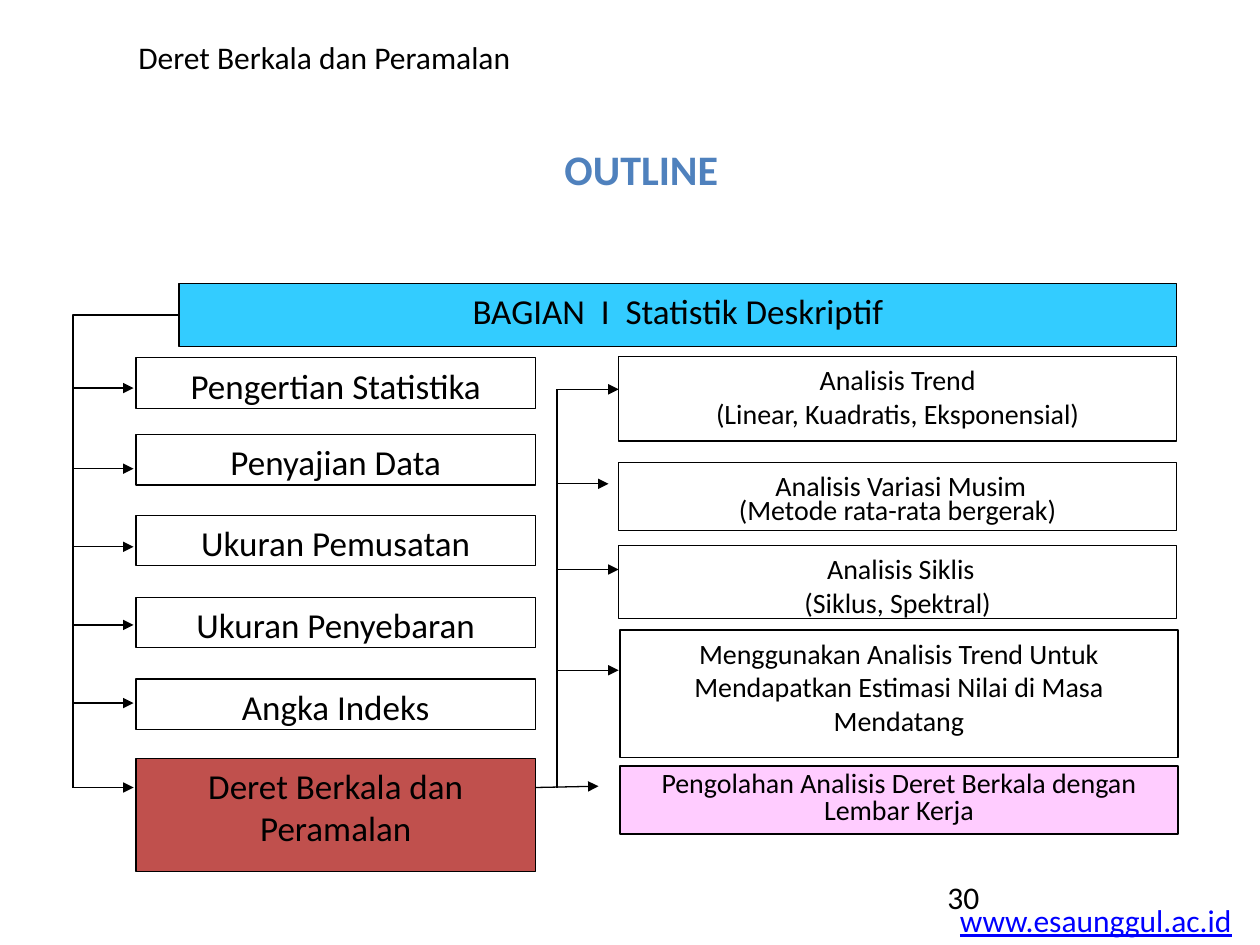
from lxml.etree import SubElement
from pptx import Presentation
from pptx.dml.color import RGBColor
from pptx.enum.shapes import MSO_CONNECTOR, MSO_SHAPE
from pptx.enum.text import MSO_ANCHOR, PP_ALIGN
from pptx.oxml.ns import qn
from pptx.util import Inches, Pt

BLACK = RGBColor(0, 0, 0)
CYAN = RGBColor(0x33, 0xCC, 0xFF)
RED = RGBColor(0xC0, 0x50, 0x4D)
PINK = RGBColor(0xFF, 0xCC, 0xFF)
TITLE_BLUE = RGBColor(0x4F, 0x81, 0xBD)
LINK_BLUE = RGBColor(0, 0, 0xFF)

TOPICS = [
    (2.84, 0.4, ["Pengertian Statistika"], None),
    (3.45, 0.4, ["Penyajian Data"], None),
    (4.09, 0.4, ["Ukuran Pemusatan"], None),
    (4.74, 0.4, ["Ukuran Penyebaran"], None),
    (5.39, 0.4, ["Angka Indeks"], None),
    (6.02, 0.9, ["Deret Berkala dan", "Peramalan"], RED),
]
TOPIC_ARROWS = [3.08, 3.72, 4.34, 4.96, 5.58, 6.25]
DETAILS = [
    (4.91, 2.83, 0.67, ["Analisis Trend", "(Linear, Kuadratis, Eksponensial)"], None, None),
    (4.91, 3.67, 0.54, [" Analisis Variasi Musim", "(Metode rata-rata bergerak)"], None, 0.7),
    (4.91, 4.33, 0.58, [" Analisis Siklis", "(Siklus, Spektral)"], None, None),
    (4.92, 5, 1.01, ["Menggunakan Analisis Trend Untuk Mendapatkan Estimasi Nilai di Masa Mendatang"],
     None, None),
    (4.92, 6.08, 0.54, ["Pengolahan Analisis Deret Berkala dengan Lembar Kerja"], PINK, 0.8),
]
DETAIL_ARROWS = [(3.09, 4.91), (3.84, 4.83), (4.52, 4.91), (5.32, 4.91)]


def write(tf, lines, size, color=BLACK, align=PP_ALIGN.CENTER, last_spacing=None):
    for i, text in enumerate(lines):
        p = tf.paragraphs[0] if i == 0 else tf.add_paragraph()
        p.alignment = align
        r = p.add_run()
        r.text = text
        r.font.name = "Calibri"
        r.font.size = Pt(size)
        r.font.color.rgb = color
    if last_spacing:
        p.line_spacing = last_spacing
    return r


def add_text(s, box, text, size, color=BLACK, align=PP_ALIGN.LEFT, anchor=MSO_ANCHOR.TOP, wrap=True):
    tf = s.shapes.add_textbox(*map(Inches, box)).text_frame
    tf.word_wrap = wrap
    tf.vertical_anchor = anchor
    return write(tf, [text], size, color, align)


def style_outline(sp, fill=None):
    sp.shadow.inherit = False
    sp.line.color.rgb = BLACK
    sp.line.width = Pt(0.75)
    if fill is None:
        sp.fill.background()
    else:
        sp.fill.solid()
        sp.fill.fore_color.rgb = fill


def add_box(s, box, lines, size, fill=None, last_spacing=None):
    sp = s.shapes.add_shape(MSO_SHAPE.RECTANGLE, *map(Inches, box))
    style_outline(sp, fill)
    tf = sp.text_frame
    tf.word_wrap = True
    tf.vertical_anchor = MSO_ANCHOR.TOP
    write(tf, lines, size, last_spacing=last_spacing)


def add_line(s, x1, y1, x2, y2, arrow=True):
    c = s.shapes.add_connector(MSO_CONNECTOR.STRAIGHT, *map(Inches, (x1, y1, x2, y2)))
    c.line.color.rgb = BLACK
    c.line.width = Pt(0.75)
    if arrow:
        SubElement(c.line._get_or_add_ln(), qn("a:tailEnd"), type="triangle")
    SubElement(c._element.spPr, qn("a:effectLst"))


def add_heading(s, left, top, width):
    add_text(s, (left + 0.17, top, 7.92, 0.4), "Deret Berkala dan Peramalan", 18)
    r = add_text(s, (left, top + 0.83, width, 0.51), "OUTLINE", 24, TITLE_BLUE,
                 PP_ALIGN.CENTER, MSO_ANCHOR.MIDDLE)
    r.font.bold = True


def add_topics(s, left, width, rail):
    for top, height, lines, fill in TOPICS:
        add_box(s, (left, top, width, height), lines, 20, fill)
    fb = s.shapes.build_freeform(Inches(1.42), Inches(2.5))
    fb.add_line_segments([(Inches(rail), Inches(2.5)), (Inches(rail), Inches(6.25))], close=False)
    style_outline(fb.convert_to_shape())
    for y in TOPIC_ARROWS:
        add_line(s, rail, y, left - 0.02, y)


def add_details(s, width, rail):
    for left, top, height, lines, fill, spacing in DETAILS:
        add_box(s, (left, top, width, height), lines, 16, fill, spacing)
    add_line(s, rail, 3.09, rail, 6.25, arrow=False)
    for y, end in DETAIL_ARROWS:
        add_line(s, rail + 0.01, y, end, y)
    add_line(s, 4.25, 6.25, 4.75, 6.24)


def add_footer(s, left, top):
    r = add_text(s, (left + 0.1, top + 0.18, 2.38, 0.4), "www.esaunggul.ac.id", 18, LINK_BLUE, wrap=False)
    r.font.underline = True
    add_text(s, (left, top, 2.08, 0.5), "30", 18)


def main():
    prs = Presentation()
    prs.slide_width, prs.slide_height = Inches(10), Inches(7.5)
    s = prs.slides.add_slide(prs.slide_layouts[6])
    add_footer(s, 7.42, 6.92)
    add_heading(s, 0.83, 0.25, 8.52)
    add_box(s, (1.42, 2.25, 7.92, 0.5), ["BAGIAN  I  Statistik Deskriptif"], 20, CYAN)
    add_topics(s, 1.08, 3.17, 0.58)
    add_details(s, 4.43, 4.42)
    prs.save("out.pptx")


if __name__ == "__main__":
    main()
